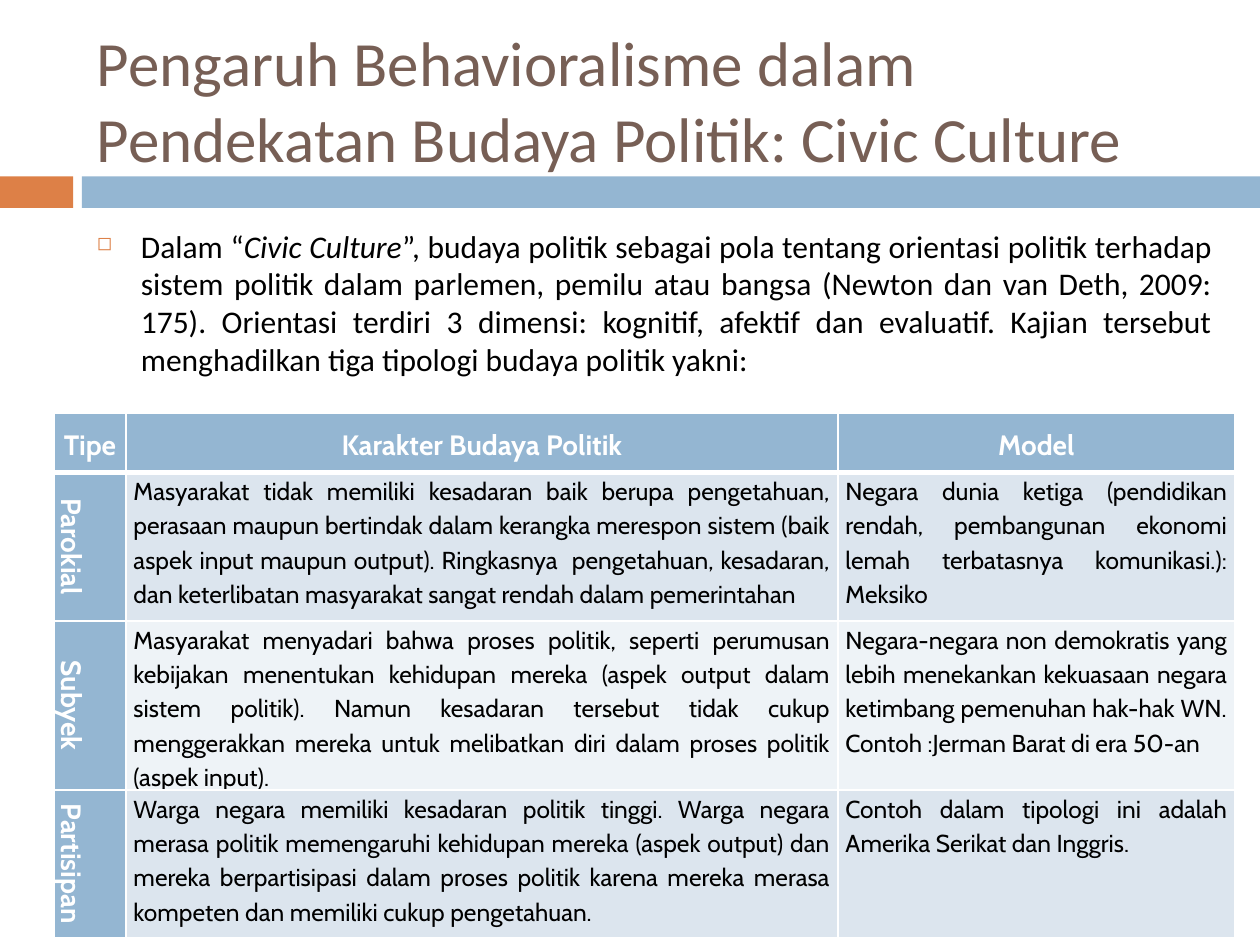
"""Build the slide on political culture types with its table."""
from pptx import Presentation
from pptx.dml.color import RGBColor as Rgb
from pptx.enum.shapes import MSO_SHAPE as Kind
from pptx.enum.text import MSO_ANCHOR as Anchor, PP_ALIGN as Align
from pptx.oxml import parse_xml
from pptx.oxml.ns import nsdecls
from pptx.util import Inches, Pt


def paint(fill, tone):
    fill.solid()
    fill.fore_color.rgb = Rgb.from_string(tone)


def write(para, text, face, size, tone, bold=False, slant=False):
    run = para.add_run()
    run.text = text
    font = run.font
    font.name, font.size, font.bold, font.italic = face, Pt(size), bold, slant
    paint(font.fill, tone)


BLUE, ORANGE, WHITE, BLACK = "94B6D2", "DD8047", "FFFFFF", "000000"

deck = Presentation()
deck.slide_width, deck.slide_height = Inches(10), Inches(7.5)
slide = deck.slides.add_slide(deck.slide_layouts[6])
shapes = slide.shapes

for left, width, tone in ((0, 0.58, ORANGE), (0.65, 9.35, BLUE)):
    bar = shapes.add_shape(Kind.RECTANGLE, Inches(left), Inches(1.4), Inches(width), Inches(0.25))
    bar.shadow.inherit = False
    paint(bar.fill, tone)
    bar.line.fill.background()

title = shapes.add_textbox(Inches(0.67), Inches(0.25), Inches(8.92), Inches(1.08)).text_frame
title.word_wrap = True
title.vertical_anchor = Anchor.MIDDLE
write(title.paragraphs[0], "Pengaruh Behavioralisme dalam Pendekatan Budaya Politik: Civic Culture",
      "Calibri", 36, "775F55")

body = shapes.add_textbox(Inches(0.67), Inches(1.75), Inches(9.05), Inches(5.46)).text_frame
body.word_wrap = True
para = body.paragraphs[0]
para.alignment = Align.JUSTIFY
props = para._p.get_or_add_pPr()
props.set("marL", str(Inches(0.35)))
props.set("indent", str(Inches(-0.35)))
for tag in (f'<a:buClr {nsdecls("a")}><a:srgbClr val="{ORANGE}"/></a:buClr>',
            f'<a:buSzPct {nsdecls("a")} val="60000"/>',
            f'<a:buChar {nsdecls("a")} char="◻"/>'):
    props.append(parse_xml(tag))
for text, slant in (
    ("Dalam “", False),
    ("Civic Culture", True),
    ("”, budaya politik sebagai pola tentang orientasi politik terhadap sistem politik dalam "
     "parlemen, pemilu atau bangsa (Newton dan van Deth, 2009: 175). Orientasi terdiri 3 dimensi: "
     "kognitif, afektif dan evaluatif. Kajian tersebut menghadilkan tiga tipologi budaya politik "
     "yakni:", False),
):
    write(para, text, "Calibri", 18, BLACK, slant=slant)

rows = (
    ("Tipe", "Karakter Budaya Politik", "Model"),
    ("Parokial",
     "Masyarakat tidak memiliki kesadaran baik berupa pengetahuan, perasaan maupun bertindak dalam "
     "kerangka merespon sistem (baik aspek input maupun output). Ringkasnya  pengetahuan, "
     "kesadaran, dan keterlibatan masyarakat sangat rendah dalam pemerintahan",
     "Negara dunia ketiga (pendidikan rendah, pembangunan ekonomi lemah terbatasnya komunikasi.): "
     "Meksiko"),
    ("Subyek",
     "Masyarakat menyadari bahwa proses politik, seperti perumusan kebijakan menentukan kehidupan "
     "mereka (aspek output dalam sistem politik). Namun kesadaran tersebut tidak cukup "
     "menggerakkan mereka untuk melibatkan diri dalam proses politik (aspek input).",
     "Negara-negara non demokratis yang lebih menekankan kekuasaan negara ketimbang pemenuhan "
     "hak-hak WN. Contoh :Jerman Barat di era 50-an"),
    ("Partisipan",
     "Warga negara memiliki kesadaran politik tinggi. Warga negara merasa politik memengaruhi "
     "kehidupan mereka (aspek output) dan mereka berpartisipasi dalam proses politik karena mereka "
     "merasa kompeten dan memiliki cukup pengetahuan.",
     "Contoh dalam tipologi ini adalah Amerika Serikat dan Inggris."),
)
table = shapes.add_table(4, 3, Inches(0.43), Inches(3.28), Inches(9.37), Inches(4.01)).table
for col, width in zip(table.columns, (0.57, 5.65, 3.15)):
    col.width = Inches(width)
for row, height in zip(table.rows, (0.47, 1.18, 1.18, 1.17)):
    row.height = Inches(height)

for r, texts in enumerate(rows):
    for c, text in enumerate(texts):
        cell = table.cell(r, c)
        head = r == 0 or c == 0
        cell.margin_left = cell.margin_right = Inches(0.06)
        cell.margin_top = cell.margin_bottom = 0
        cell.vertical_anchor = Anchor.MIDDLE if head else Anchor.TOP
        props = cell._tc.get_or_add_tcPr()
        if r and c == 0:
            props.set("vert", "vert")
        for side in "LRTB":
            thick = (r, side) in ((0, "B"), (1, "T"))
            props.append(parse_xml(
                f'<a:ln{side} {nsdecls("a")} w="{Pt(3 if thick else 1)}"><a:solidFill>'
                f'<a:srgbClr val="{WHITE}"/></a:solidFill></a:ln{side}>'))
        paint(cell.fill, BLUE if head else "DCE5EE" if r % 2 else "EEF3F7")
        para = cell.text_frame.paragraphs[0]
        para.alignment = Align.CENTER if head else Align.JUSTIFY
        para.line_spacing = 1.15
        write(para, text, "Cabin", 16 if head else 14, WHITE if head else BLACK, bold=head)

deck.save("out.pptx")
